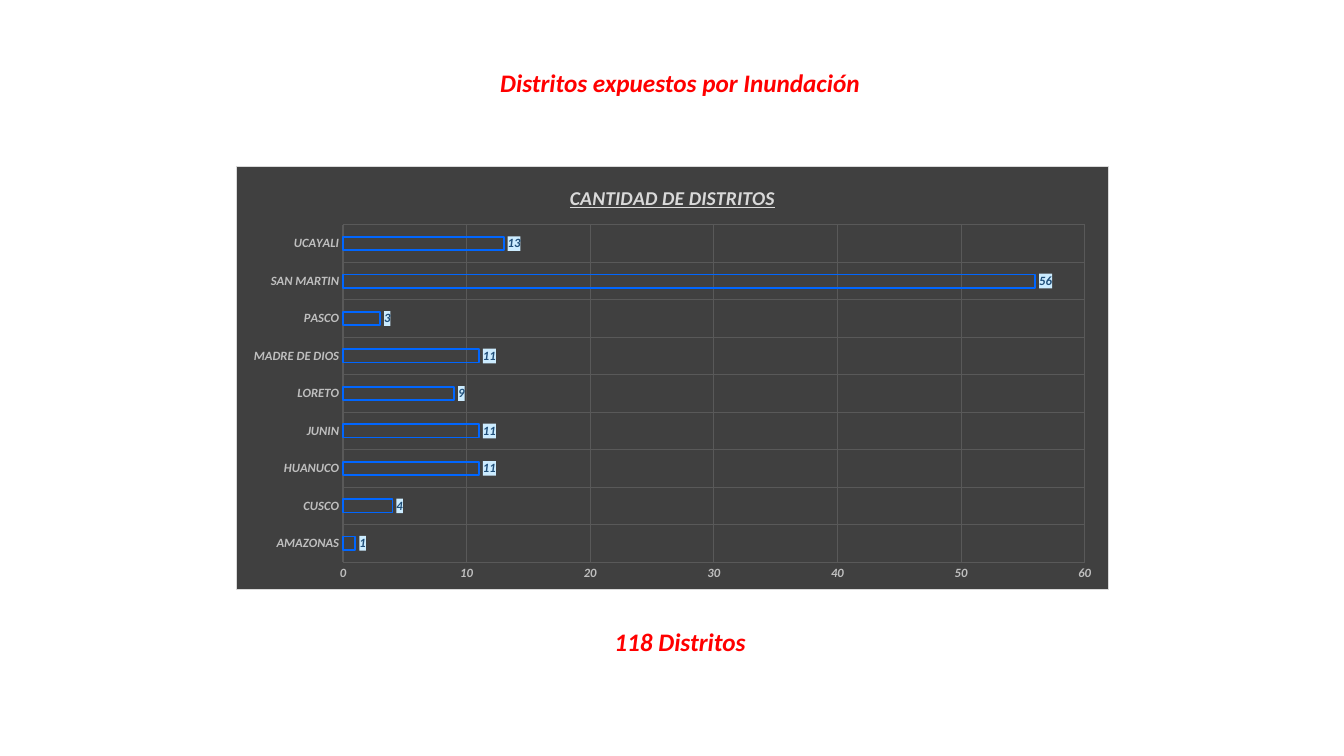
from dataclasses import dataclass

from lxml.etree import _Element
from pptx import Presentation
from pptx.chart.chart import Chart
from pptx.chart.data import CategoryChartData
from pptx.dml.color import RGBColor
from pptx.enum.chart import XL_CHART_TYPE, XL_LABEL_POSITION, XL_TICK_MARK
from pptx.enum.text import MSO_AUTO_SIZE, PP_ALIGN
from pptx.oxml import parse_xml
from pptx.oxml.ns import nsdecls
from pptx.slide import Slide
from pptx.text.text import Font
from pptx.util import Inches, Pt

FONT = "Calibri"
COLORS = {
    "heading": "FF0000",
    "panel": "404040",
    "border": "D9D9D9",
    "title": "D9D9D9",
    "axis": "BFBFBF",
    "grid": "595959",
    "bar": "0066FF",
    "label": "1F4E79",
    "label_fill": "CCECFF",
}
DISTRICTS = {
    "AMAZONAS": 1,
    "CUSCO": 4,
    "HUANUCO": 11,
    "JUNIN": 11,
    "LORETO": 9,
    "MADRE DE DIOS": 11,
    "PASCO": 3,
    "SAN MARTIN": 56,
    "UCAYALI": 13,
}


@dataclass(frozen=True)
class Heading:
    text: str
    left: float
    top: float
    width: float
    wrap: bool


HEADINGS = [
    Heading("Distritos expuestos por Inundación", 4.84, 0.62, 3.81, False),
    Heading("118 Distritos", 5.99, 6.16, 1.51, True),
]


def style_font(font: Font, size: float, color: str) -> None:
    font.name = FONT
    font.size = Pt(size)
    font.bold = True
    font.italic = True
    font.color.rgb = RGBColor.from_string(COLORS[color])


def add_heading(slide: Slide, heading: Heading) -> None:
    box = slide.shapes.add_textbox(
        Inches(heading.left), Inches(heading.top), Inches(heading.width), Inches(0.4)
    )
    frame = box.text_frame
    frame.word_wrap = heading.wrap
    frame.auto_size = MSO_AUTO_SIZE.SHAPE_TO_FIT_TEXT
    paragraph = frame.paragraphs[0]
    paragraph.alignment = PP_ALIGN.CENTER
    run = paragraph.add_run()
    run.text = heading.text
    style_font(run.font, 18, "heading")


def area_format(fill: str, line: str = "") -> _Element:
    outline = (
        f'<a:ln w="9525"><a:solidFill><a:srgbClr val="{COLORS[line]}"/></a:solidFill></a:ln>'
        if line
        else "<a:ln><a:noFill/></a:ln>"
    )
    return parse_xml(
        f'<c:spPr {nsdecls("c", "a")}><a:solidFill><a:srgbClr val="{COLORS[fill]}"/>'
        f"</a:solidFill>{outline}</c:spPr>"
    )


def style_axes(chart: Chart) -> None:
    for axis in (chart.category_axis, chart.value_axis):
        axis.major_tick_mark = XL_TICK_MARK.NONE
        axis.minor_tick_mark = XL_TICK_MARK.NONE
        axis.format.line.fill.background()
        axis.has_major_gridlines = True
        grid = axis.major_gridlines.format.line
        grid.width = Pt(0.75)
        grid.color.rgb = RGBColor.from_string(COLORS["grid"])
        style_font(axis.tick_labels.font, 9, "axis")
    chart.value_axis.minimum_scale = 0
    chart.value_axis.maximum_scale = 60
    chart.value_axis.major_unit = 10
    chart.value_axis.tick_labels.number_format = "#,##0"
    chart.value_axis.tick_labels.number_format_is_linked = False


def style_bars(chart: Chart) -> None:
    plot = chart.plots[0]
    plot.gap_width = 182
    plot.overlap = -50
    plot.vary_by_categories = False
    bars = plot.series[0]
    bars.invert_if_negative = False
    bars.format.fill.background()
    bars.format.line.width = Pt(1.25)
    bars.format.line.color.rgb = RGBColor.from_string(COLORS["bar"])
    labels = bars.data_labels
    labels.show_value = True
    labels.position = XL_LABEL_POSITION.OUTSIDE_END
    labels.number_format = "#,##0"
    labels.number_format_is_linked = False
    style_font(labels.font, 9, "label")
    labels._element.find("{*}txPr").addprevious(area_format("label_fill"))


def add_district_chart(slide: Slide) -> None:
    data = CategoryChartData(number_format="#,##0")
    data.categories = list(DISTRICTS)
    data.add_series("CANTIDAD DE DISTRITOS", list(DISTRICTS.values()))
    chart = slide.shapes.add_chart(
        XL_CHART_TYPE.BAR_CLUSTERED,
        Inches(2.34), Inches(1.65), Inches(8.66), Inches(4.2),
        data,
    ).chart
    chart.has_legend = False
    chart.font.name = FONT
    chart.font.size = Pt(10)
    chart._chartSpace.find("{*}txPr").addprevious(area_format("panel", "border"))
    chart.has_title = True
    chart.chart_title.include_in_layout = False
    title = chart.chart_title.text_frame.paragraphs[0].add_run()
    title.text = "CANTIDAD DE DISTRITOS"
    style_font(title.font, 14, "title")
    title.font.underline = True
    style_axes(chart)
    style_bars(chart)


def main() -> None:
    presentation = Presentation()
    presentation.slide_width = Inches(13.33)
    presentation.slide_height = Inches(7.5)
    slide = presentation.slides.add_slide(presentation.slide_layouts[6])
    for heading in HEADINGS:
        add_heading(slide, heading)
    add_district_chart(slide)
    presentation.save("out.pptx")


if __name__ == "__main__":
    main()
